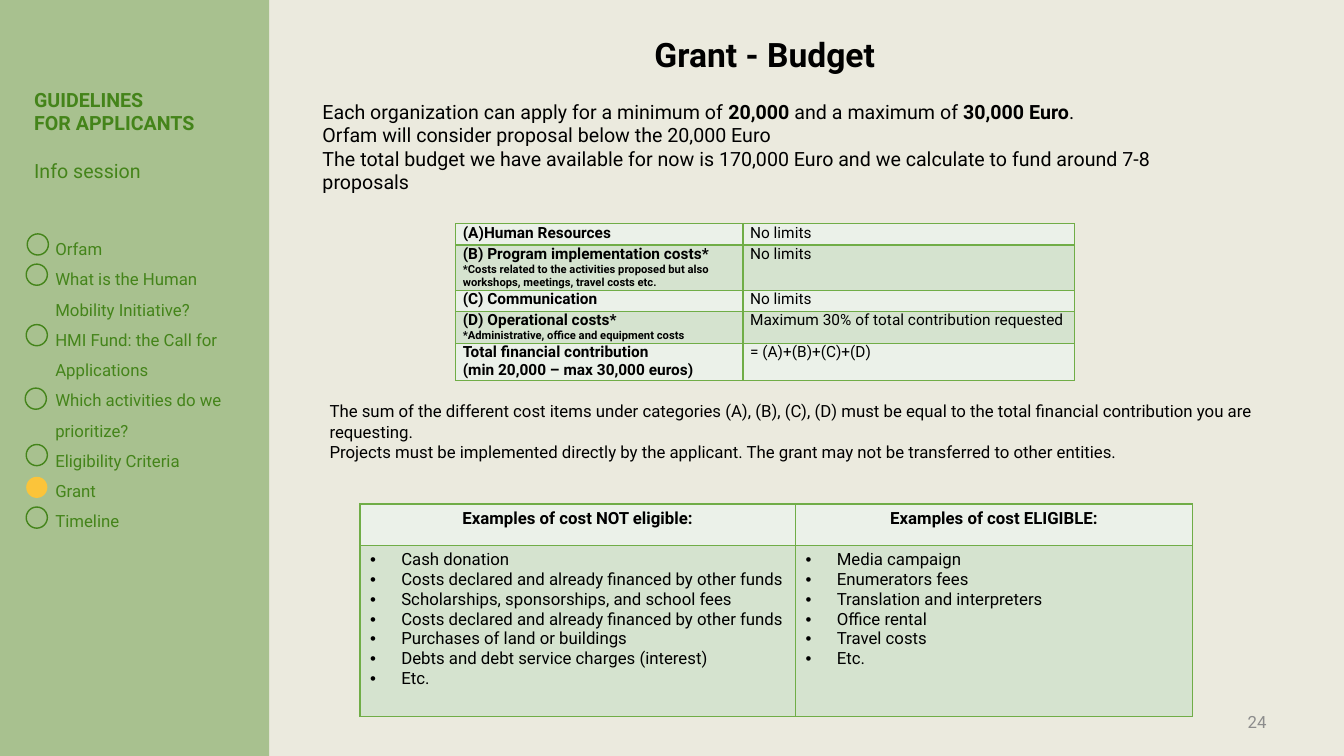
from lxml import etree
from pptx import Presentation
from pptx.dml.color import RGBColor
from pptx.enum import shapes, text
from pptx.oxml import ns
from pptx.util import Inches, Pt

FONT = "Roboto"
BEIGE = RGBColor(0xEB, 0xEA, 0xDE)
GREEN = RGBColor(0x44, 0x84, 0x1A)
BORDER = RGBColor(0x70, 0xAD, 0x47)
PALE = RGBColor(0xEB, 0xF1, 0xE9)
SAGE = RGBColor(0xD5, 0xE3, 0xCF)
YELLOW = RGBColor(0xFB, 0xC4, 0x3A)
GRAY = RGBColor(0x8C, 0x8C, 0x8C)
BLACK = RGBColor(0, 0, 0)
LEFT, CENTER, RIGHT = text.PP_ALIGN.LEFT, text.PP_ALIGN.CENTER, text.PP_ALIGN.RIGHT


def write(frame, lines, size, color=BLACK, align=LEFT, bullet=False):
    """Each line is a list of (words, bold) or (words, bold, size) spans."""
    frame.word_wrap = True
    for index, line in enumerate(lines):
        para = frame.paragraphs[0] if index == 0 else frame.add_paragraph()
        para.alignment = align
        if bullet:
            props = para._p.get_or_add_pPr()
            props.set("marL", str(Inches(0.31)))
            props.set("indent", str(-Inches(0.31)))
            etree.SubElement(props, ns.qn("a:buFont"), typeface="Arial")
            etree.SubElement(props, ns.qn("a:buChar"), char="•")
        for words, bold, *own_size in line:
            span = para.add_run()
            span.text = words
            span.font.name = FONT
            span.font.size = Pt(own_size[0] if own_size else size)
            span.font.bold = bold
            span.font.color.rgb = color
    return frame


def draw_table(left, top, widths, heights):
    frame = page.shapes.add_table(len(heights), len(widths), Inches(left), Inches(top),
                                  Inches(sum(widths)), Inches(sum(heights)))
    table = frame.table
    table.first_row = table.horz_banding = False
    for column, width in zip(table.columns, widths):
        column.width = Inches(width)
    for number, (row, height) in enumerate(zip(table.rows, heights)):
        row.height = Inches(height)
        for cell in row.cells:
            props = cell._tc.get_or_add_tcPr()
            for side in ("lnL", "lnR", "lnT", "lnB"):
                edge = etree.SubElement(props, ns.qn(f"a:{side}"), w=str(Pt(1)))
                paint = etree.SubElement(edge, ns.qn("a:solidFill"))
                etree.SubElement(paint, ns.qn("a:srgbClr"), val=str(BORDER))
            cell.fill.solid()
            cell.fill.fore_color.rgb = SAGE if number % 2 else PALE
    return table


deck = Presentation()
deck.slide_width, deck.slide_height = Inches(13.33), Inches(7.5)
page = deck.slides.add_slide(deck.slide_layouts[6])
page.background.fill.solid()
page.background.fill.fore_color.rgb = BEIGE

# Sidebar panel
panel = page.shapes.add_shape(shapes.MSO_SHAPE.RECTANGLE, 0, 0, Inches(2.67), Inches(7.5))
panel.shadow.inherit = False
panel.fill.solid()
panel.fill.fore_color.rgb = GREEN
panel.line.fill.background()
tint = panel._element.spPr.find(".//" + ns.qn("a:srgbClr"))
etree.SubElement(tint, ns.qn("a:alpha"), val="40000")

# Text blocks: place, size, colour, alignment, lines
topics = ["Orfam", "What is the Human Mobility Initiative?", "HMI Fund: the Call for Applications",
          "Which activities do we prioritize?", "Eligibility Criteria", "Grant", "Timeline"]
blocks = {
    "number": ((11.95, 7.01, 0.71, 0.31), 12, GRAY, RIGHT, [[("24", False)]]),
    "title": ((6.25, 0.29, 2.67, 0.5), 24, BLACK, CENTER, [[("Grant - Budget", True)]]),
    "intro": ((3.1, 0.94, 9.21, 1.13), 14, BLACK, LEFT, [
        [("Each organization can apply for a minimum of ", False), ("20,000", True),
         (" and a maximum of ", False), ("30,000 Euro", True), (".", False)],
        [("Orfam will consider proposal below the 20,000 Euro", False)],
        [("The total budget we have available for now is 170,000 Euro and we calculate "
          "to fund around 7-8 proposals", False)]]),
    "rules": ((3.17, 3.93, 9.91, 0.71), 12, BLACK, LEFT, [
        [("The sum of the different cost items under categories (A), (B), (C), (D) must be equal "
          "to the total financial contribution you are requesting.", False)],
        [("Projects must be implemented directly by the applicant. "
          "The grant may not be transferred to other entities.", False)]]),
    "topics": ((0.45, 2.22, 2.19, 3.1), 12, GREEN, LEFT, [[(topic, False)] for topic in topics]),
    "heading": ((0.24, 0.82, 1.94, 1.04), 14, GREEN, LEFT, [
        [("GUIDELINES", True)], [("FOR APPLICANTS", True)], [("Info session", False)]]),
}
frames = {}
for name, (place, size, color, align, lines) in blocks.items():
    box = page.shapes.add_textbox(*map(Inches, place))
    frames[name] = write(box.text_frame, lines, size, color, align)
frames["number"].vertical_anchor = text.MSO_ANCHOR.MIDDLE
frames["heading"].paragraphs[2].space_before = Pt(17)
for para in frames["topics"].paragraphs:
    para.line_spacing = 1.5

# Progress markers, the current topic filled
markers = [(0.27, 2.32), (0.26, 2.62), (0.26, 3.22), (0.25, 3.85),
           (0.26, 4.41), (0.26, 4.73), (0.26, 5.03)]
for topic, (left, top) in zip(topics, markers):
    marker = page.shapes.add_shape(shapes.MSO_SHAPE.OVAL, Inches(left), Inches(top),
                                   Inches(0.21), Inches(0.21))
    marker.shadow.inherit = False
    if topic == "Grant":
        marker.fill.solid()
        marker.fill.fore_color.rgb = YELLOW
        marker.line.fill.background()
    else:
        marker.fill.background()
        marker.line.color.rgb = GREEN
        marker.line.width = Pt(1)

# Budget table: label, second line with its size, limit
budget = [
    ("(A)Human Resources", None, "No limits"),
    ("(B) Program implementation costs*",
     ("*Costs related to the activities proposed but also workshops, meetings, travel costs etc.",
      True, 8), "No limits"),
    ("(C) Communication", None, "No limits"),
    ("(D) Operational costs*", ("*Administrative, office and equipment costs", True, 8),
     "Maximum 30% of total contribution requested"),
    ("Total financial contribution", ("(min 20,000 – max 30,000 euros)", True),
     "= (A)+(B)+(C)+(D)"),
]
table = draw_table(4.52, 2.22, [2.85, 3.29], [0.21, 0.45, 0.21, 0.32, 0.36])
for row, (label, detail, limit) in zip(table.rows, budget):
    for cell in row.cells:
        cell.margin_left = cell.margin_right = Inches(0.07)
        cell.margin_top = cell.margin_bottom = 0
    lines = [[(label, True)]] + ([[detail]] if detail else [])
    write(row.cells[0].text_frame, lines, 11)
    write(row.cells[1].text_frame, [[(limit, False)]], 11)

# Cost examples table
examples = {
    "Examples of cost NOT eligible:": [
        "Cash donation", "Costs declared and already financed by other funds",
        "Scholarships, sponsorships, and school fees",
        "Costs declared and already financed by other funds",
        "Purchases of land or buildings", "Debts and debt service charges (interest)", "Etc."],
    "Examples of cost ELIGIBLE:": [
        "Media campaign", "Enumerators fees", "Translation and interpreters",
        "Office rental", "Travel costs", "Etc."],
}
table = draw_table(3.57, 5.0, [4.32, 3.94], [0.41, 1.7])
for column, (heading, items) in enumerate(examples.items()):
    write(table.cell(0, column).text_frame, [[(heading, True)]], 12, align=CENTER)
    write(table.cell(1, column).text_frame, [[(item, False)] for item in items], 12, bullet=True)

deck.save("out.pptx")
